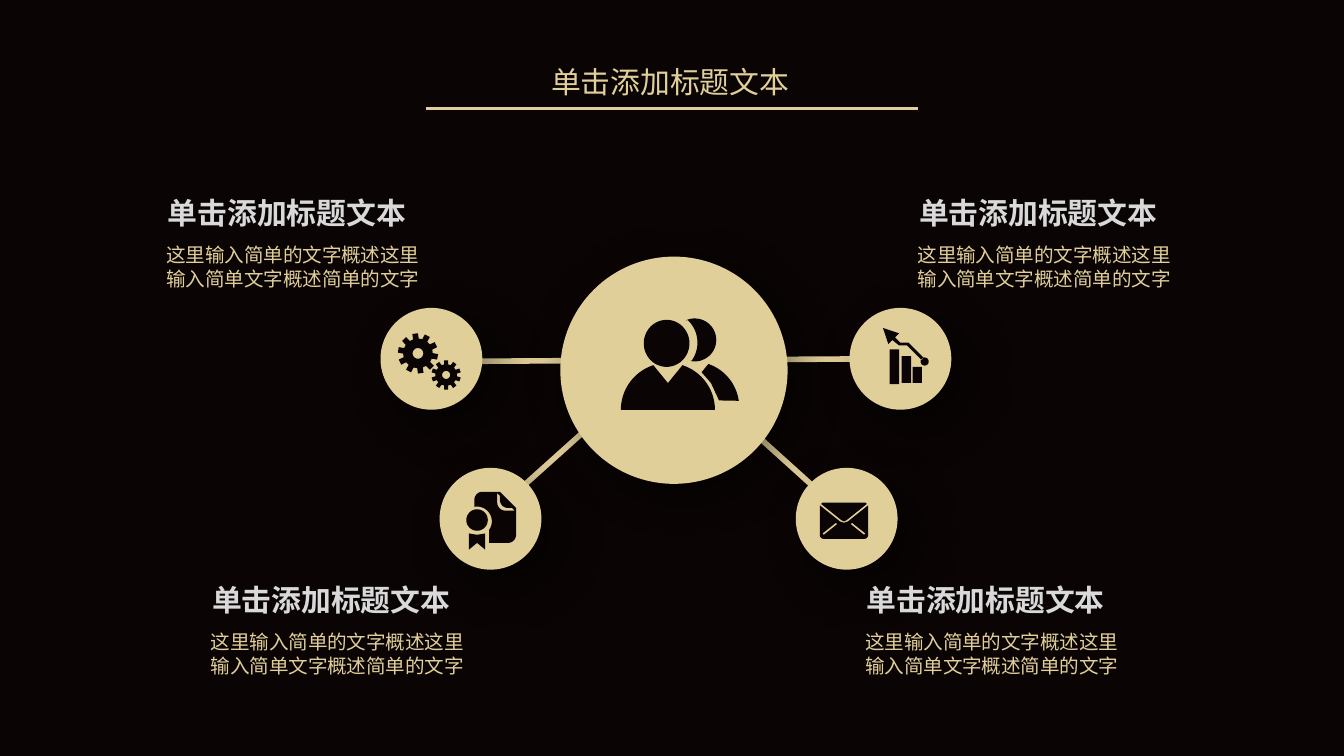
import dataclasses
import math

import lxml.etree
import pptx
import pptx.dml.color
import pptx.enum.shapes
import pptx.enum.text
import pptx.oxml.ns
import pptx.util

Inches = pptx.util.Inches
Pt = pptx.util.Pt
RGB = pptx.dml.color.RGBColor.from_string
qn = pptx.oxml.ns.qn
Shape = pptx.enum.shapes.MSO_SHAPE


@dataclasses.dataclass
class Theme:
    dark = RGB("0A0404")
    gold = RGB("E1CF9A")
    grey = RGB("D9D9D9")
    font = "Noto Sans CJK SC"
    head = Pt(16)
    note = Pt(10.5)


theme = Theme()
deck = pptx.Presentation()
deck.slide_width = Inches(10)
deck.slide_height = Inches(10 * 9 / 16)
slide = deck.slides.add_slide(deck.slide_layouts[5])
slide.background.fill.solid()
slide.background.fill.fore_color.rgb = theme.dark
shapes = slide.shapes


def arc(x, y, r, start=0, end=360):
    """Points on a circle; degrees run clockwise from the right."""
    turns = [math.radians(start + (end - start) * i / 32) for i in range(33)]
    return [(x + r * math.cos(t), y + r * math.sin(t)) for t in turns]


def trace(*rings):
    """Draw one dark outline; rings inside others are holes."""
    pen = None
    for ring in rings:
        pts = [(Inches(x), Inches(y)) for x, y in ring]
        if pen is None:
            pen = shapes.build_freeform(*pts[0])
        else:
            pen.move_to(*pts[0])
        pen.add_line_segments(pts[1:], close=True)
    icon = pen.convert_to_shape()
    icon.shadow.inherit = False
    icon.fill.solid()
    icon.fill.fore_color.rgb = theme.dark
    icon.line.fill.background()


# Title
title = shapes.title
title.left, title.top, title.width, title.height = map(Inches, (4, 0.29, 2, 0.46))
frame = title.text_frame
frame.text = "单击添加标题文本"
frame.word_wrap = True
frame.auto_size = pptx.enum.text.MSO_AUTO_SIZE.NONE
frame.vertical_anchor = pptx.enum.text.MSO_ANCHOR.TOP
para = frame.paragraphs[0]
para.alignment = pptx.enum.text.PP_ALIGN.JUSTIFY
para.line_spacing = 1.5
para.space_before = Pt(0)
para.runs[0].font.size = theme.head
para.runs[0].font.color.rgb = theme.gold

# Rule under the title, then the spokes
for x1, y1, x2, y2, width in (
    (3.17, 0.81, 6.83, 0.81, 1.5),
    (4.79, 2.48, 6.03, 3.6, 3),
    (3.27, 2.69, 6.57, 2.67, 3),
    (3.9, 3.61, 5.26, 2.39, 3),
):
    line = shapes.add_connector(
        pptx.enum.shapes.MSO_CONNECTOR.STRAIGHT,
        Inches(x1), Inches(y1), Inches(x2), Inches(y2))
    line.line.color.rgb = theme.gold
    line.line.width = Pt(width)
    lxml.etree.SubElement(line._element.spPr, qn("a:effectLst"))

# Discs with soft shadows: left, top, size, line, blur, distance
for x, y, size, width, blur, dist in (
    (5.93, 3.49, 0.74, 1.25, 28, 12),
    (2.84, 2.3, 0.74, 1.25, 28, 12),
    (3.28, 3.49, 0.74, 1.25, 28, 12),
    (6.33, 2.3, 0.74, 1.25, 28, 12),
    (4.18, 1.92, 1.67, 1.5, 25, 7),
):
    disc = shapes.add_shape(
        Shape.OVAL, Inches(x), Inches(y), Inches(size), Inches(size))
    disc.fill.solid()
    disc.fill.fore_color.rgb = theme.gold
    disc.line.color.rgb = theme.gold
    disc.line.width = Pt(width)
    disc.shadow.inherit = False
    glow = lxml.etree.SubElement(
        disc._element.spPr.find(qn("a:effectLst")), qn("a:outerShdw"),
        blurRad=str(Pt(blur)), dist=str(Pt(dist)), dir="2700000")
    tint = lxml.etree.SubElement(glow, qn("a:srgbClr"), val="000000")
    lxml.etree.SubElement(tint, qn("a:alpha"), val="45000")

# Envelope
slit = [(6.22, 3.89), (6.12, 3.97), (6.13, 3.98), (6.23, 3.9)]
trace(
    [(6.1, 3.76), (6.25, 3.88), (6.28, 3.89), (6.31, 3.88), (6.46, 3.76)]
    + arc(6.43, 3.98, 0.03, 0, 90) + arc(6.13, 3.98, 0.03, 90, 180),
    slit, [(12.56 - x, y) for x, y in slit])
trace([(6.11, 3.75), (6.26, 3.87), (6.28, 3.88), (6.3, 3.87),
       (6.45, 3.75), (6.44, 3.74), (6.12, 3.74)])

# Gears: centre, tip, root, hole, tilt
for x, y, tip, root, hole, tilt in (
    (3.11, 2.63, 0.15, 0.11, 0.04, 10),
    (3.32, 2.79, 0.11, 0.08, 0.03, 18),
):
    teeth = []
    for i in range(10):
        for turn, r in ((-11, root), (-8, tip), (8, tip), (11, root)):
            t = math.radians(tilt + 36 * i + turn)
            teeth.append((x + r * math.cos(t), y + r * math.sin(t)))
    trace(teeth, arc(x, y, hole))

# Certificate: page, fold, ribbon, seal
trace(
    [(3.72, 3.66)] + arc(3.59, 3.72, 0.06, 270, 180)
    + arc(3.55, 3.88, 0.11, -100, 35) + [(3.64, 4.04)]
    + arc(3.78, 3.98, 0.06, 90, 0) + [(3.84, 3.78)],
    arc(3.76, 3.74, 0.06, 90, 180) + [(3.7, 3.67), (3.72, 3.69)]
    + arc(3.78, 3.72, 0.06, 180, 90) + [(3.81, 3.78), (3.83, 3.8)],
    [(3.49, 3.97), (3.49, 4.09), (3.55, 4.04), (3.61, 4.09),
     (3.61, 3.97), (3.55, 3.98)],
    arc(3.55, 3.87, 0.08))

# Falling bars with an arrow
for x, y, high in ((6.62, 2.6, 0.26), (6.71, 2.65, 0.2), (6.79, 2.73, 0.12)):
    bar = shapes.add_shape(
        Shape.RECTANGLE, Inches(x), Inches(y), Inches(0.07), Inches(high))
    bar.shadow.inherit = False
    bar.fill.solid()
    bar.fill.fore_color.rgb = theme.dark
    bar.line.fill.background()
trace(
    [(6.64, 2.53), (6.69, 2.57), (6.75, 2.57), (6.86, 2.68), (6.87, 2.66),
     (6.76, 2.55), (6.7, 2.55), (6.66, 2.51), (6.69, 2.48), (6.57, 2.44),
     (6.61, 2.56)],
    arc(6.88, 2.69, 0.03))

# Two people: back body, back head, front head, front body
trace(arc(5.16, 3.03, 0.34, -8, -71)
      + [(5.22, 2.77), (5.29, 2.85), (5.35, 2.98)])
trace(arc(5.17, 2.53, 0.16, -115, 103) + arc(4.96, 2.55, 0.23, 36, -47))
head = shapes.add_shape(
    Shape.OVAL, Inches(4.79), Inches(2.38), Inches(0.34), Inches(0.35))
head.shadow.inherit = False
head.fill.solid()
head.fill.fore_color.rgb = theme.dark
head.line.fill.background()
trace(arc(4.97, 3.05, 0.35, 0, -72) + [(4.97, 2.85)]
      + arc(4.97, 3.05, 0.35, -108, -180))

# Captions
note = "这里输入简单的文字概述这里输入简单文字概述简单的文字"
for x, y in ((1.14, 1.4), (1.47, 4.28), (6.73, 1.4), (6.34, 4.28)):
    for text, left, top, wide, high, size, color, bold in (
        (note, x, y + 0.36, 2.13, 0.45, theme.note, theme.gold, False),
        ("单击添加标题文本", x + 0.01, y, 2.21, 0.37, theme.head, theme.grey, True),
    ):
        box = shapes.add_textbox(
            Inches(left), Inches(top), Inches(wide), Inches(high))
        box.text_frame.word_wrap = True
        box.text_frame.text = text
        font = box.text_frame.paragraphs[0].runs[0].font
        font.size = size
        font.bold = bold
        font.color.rgb = color

# One typeface for Latin and East Asian text
for shape in shapes:
    if shape.has_text_frame:
        for para in shape.text_frame.paragraphs:
            for run in para.runs:
                run.font.name = theme.font
                lxml.etree.SubElement(
                    run._r.get_or_add_rPr(), qn("a:ea"), typeface=theme.font)

deck.save("out.pptx")
